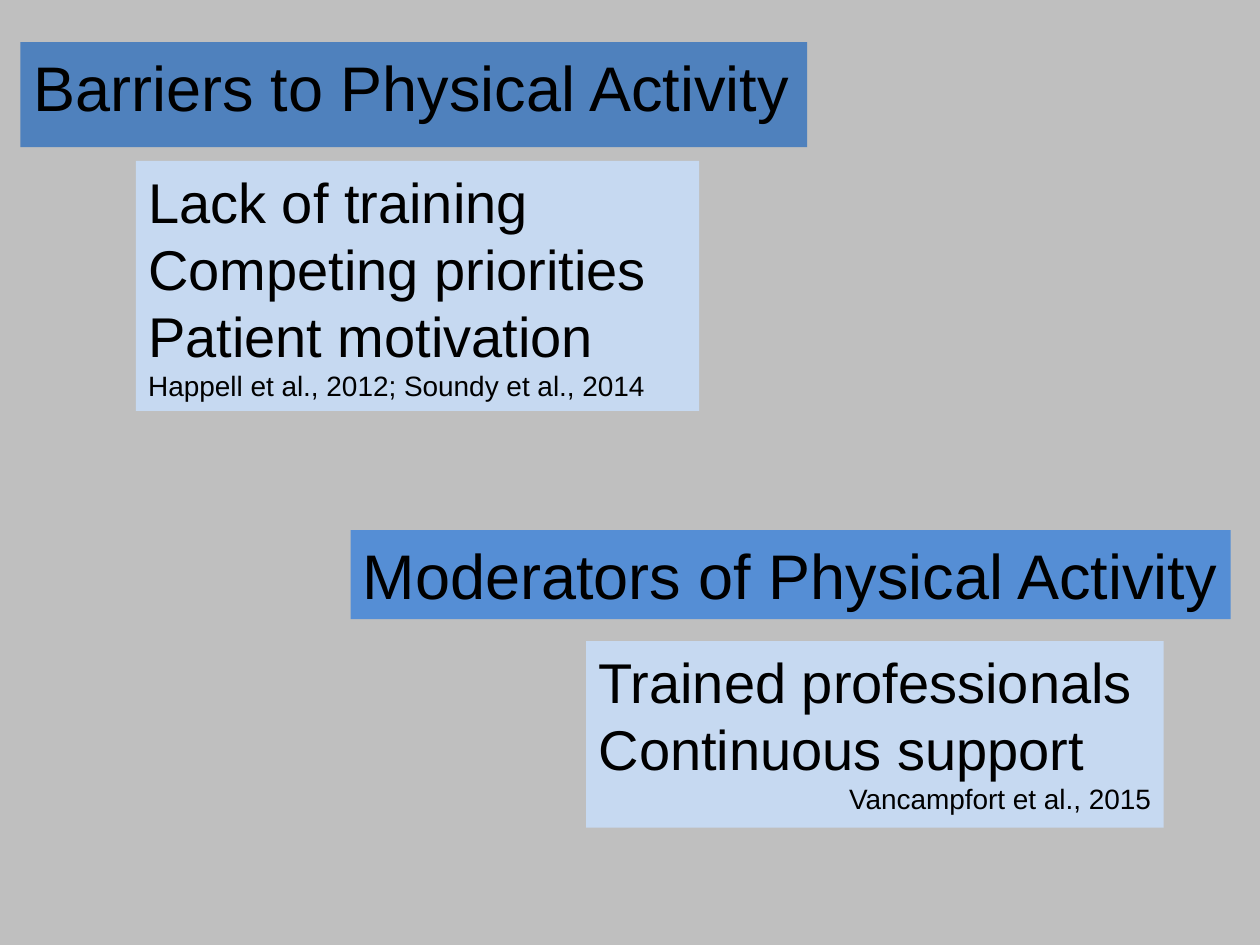
from dataclasses import dataclass

from pptx import Presentation
from pptx.dml.color import RGBColor
from pptx.enum.text import MSO_ANCHOR, MSO_AUTO_SIZE, PP_ALIGN
from pptx.util import Pt


@dataclass(frozen=True)
class Theme:
    font: str = "Arial"
    text: str = "000000"
    background: str = "BFBFBF"
    barriers: str = "4F81BD"
    moderators: str = "558ED5"
    panel: str = "C6D9F1"
    heading_size: int = 36
    point_size: int = 32
    citation_size: int = 16


theme = Theme()


def place_box(box, left, top, width, height, fill):
    """Position and fill a box and make its text frame wrap from the top left."""
    box.left, box.top, box.width, box.height = map(Pt, (left, top, width, height))
    box.fill.solid()
    box.fill.fore_color.rgb = RGBColor.from_string(fill)
    frame = box.text_frame
    frame.word_wrap = True
    frame.auto_size = MSO_AUTO_SIZE.SHAPE_TO_FIT_TEXT
    frame.vertical_anchor = MSO_ANCHOR.TOP
    return frame


def write_line(frame, text, *, size, align=PP_ALIGN.LEFT):
    """Fill the empty first paragraph, or add one after it."""
    para = frame.paragraphs[0] if not frame.text else frame.add_paragraph()
    para.alignment = align
    span = para.add_run()
    span.text = text
    span.font.name = theme.font
    span.font.size = Pt(size)
    span.font.color.rgb = RGBColor.from_string(theme.text)


deck = Presentation()
deck.slide_width, deck.slide_height = Pt(720), Pt(540)
page = deck.slides.add_slide(deck.slide_layouts[5])
page.background.fill.solid()
page.background.fill.fore_color.rgb = RGBColor.from_string(theme.background)

# The first heading is the slide title; the second is a matching box.
title = page.shapes.title
moderators_heading = page.shapes.add_textbox(0, 0, 0, 0)
headings = [
    (title, "Barriers to Physical Activity", (11.7, 24, 449.5, 50.9), theme.barriers),
    (moderators_heading, "Moderators of Physical Activity",
     (200.3, 302.9, 502.9, 50.9), theme.moderators),
]
for box, text, place, fill in headings:
    frame = place_box(box, *place, fill)
    write_line(frame, text, size=theme.heading_size)

panels = [
    ((77.6, 91.9, 321.9, 142.9),
     ["Lack of training", "Competing priorities", "Patient motivation"],
     "Happell et al., 2012; Soundy et al., 2014", PP_ALIGN.LEFT),
    ((335, 366.4, 330, 106.6),
     ["Trained professionals", "Continuous support"],
     "Vancampfort et al., 2015", PP_ALIGN.RIGHT),
]
for place, points, citation, citation_align in panels:
    frame = place_box(page.shapes.add_textbox(0, 0, 0, 0), *place, theme.panel)
    for point in points:
        write_line(frame, point, size=theme.point_size)
    write_line(frame, citation, size=theme.citation_size, align=citation_align)

deck.save("out.pptx")
